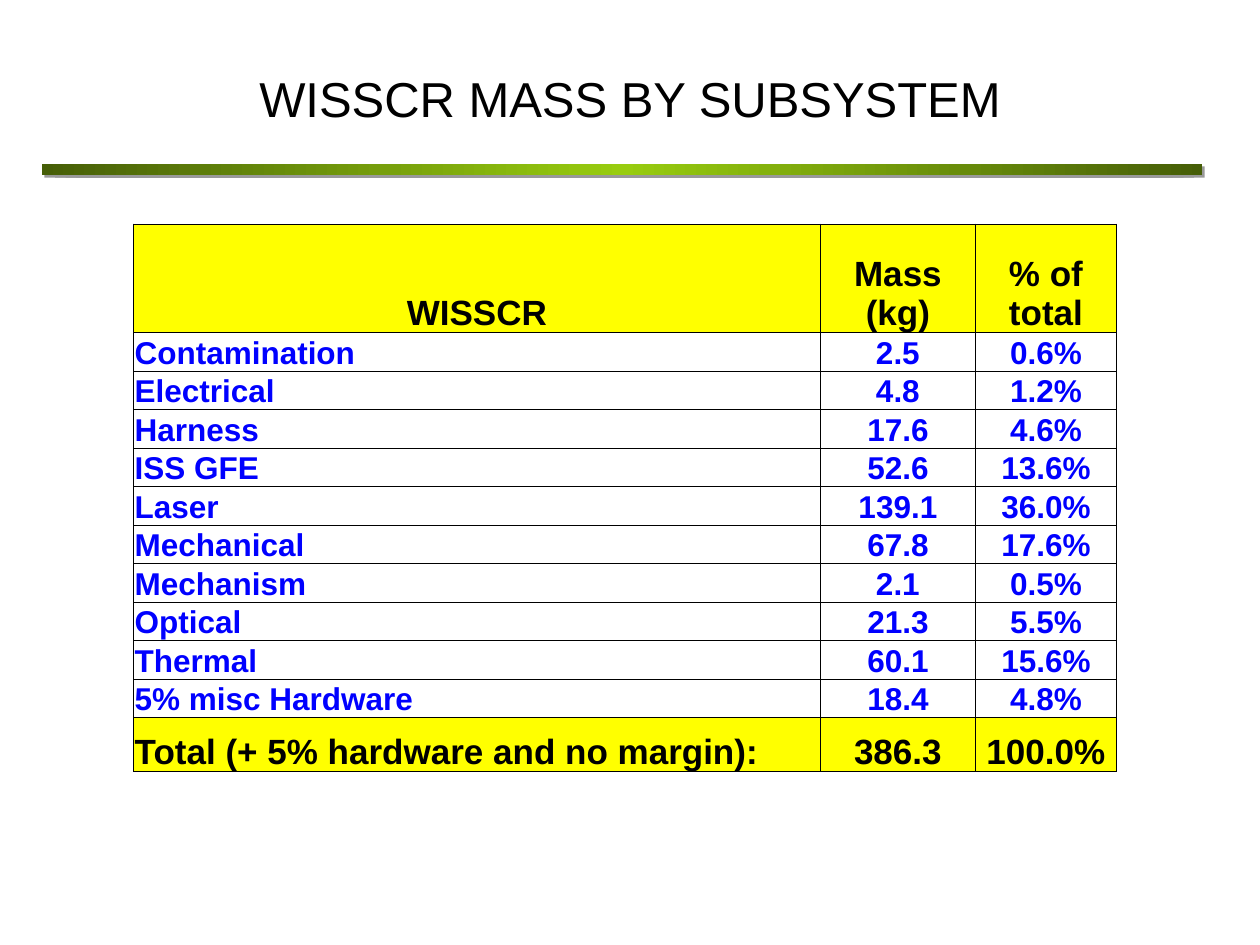
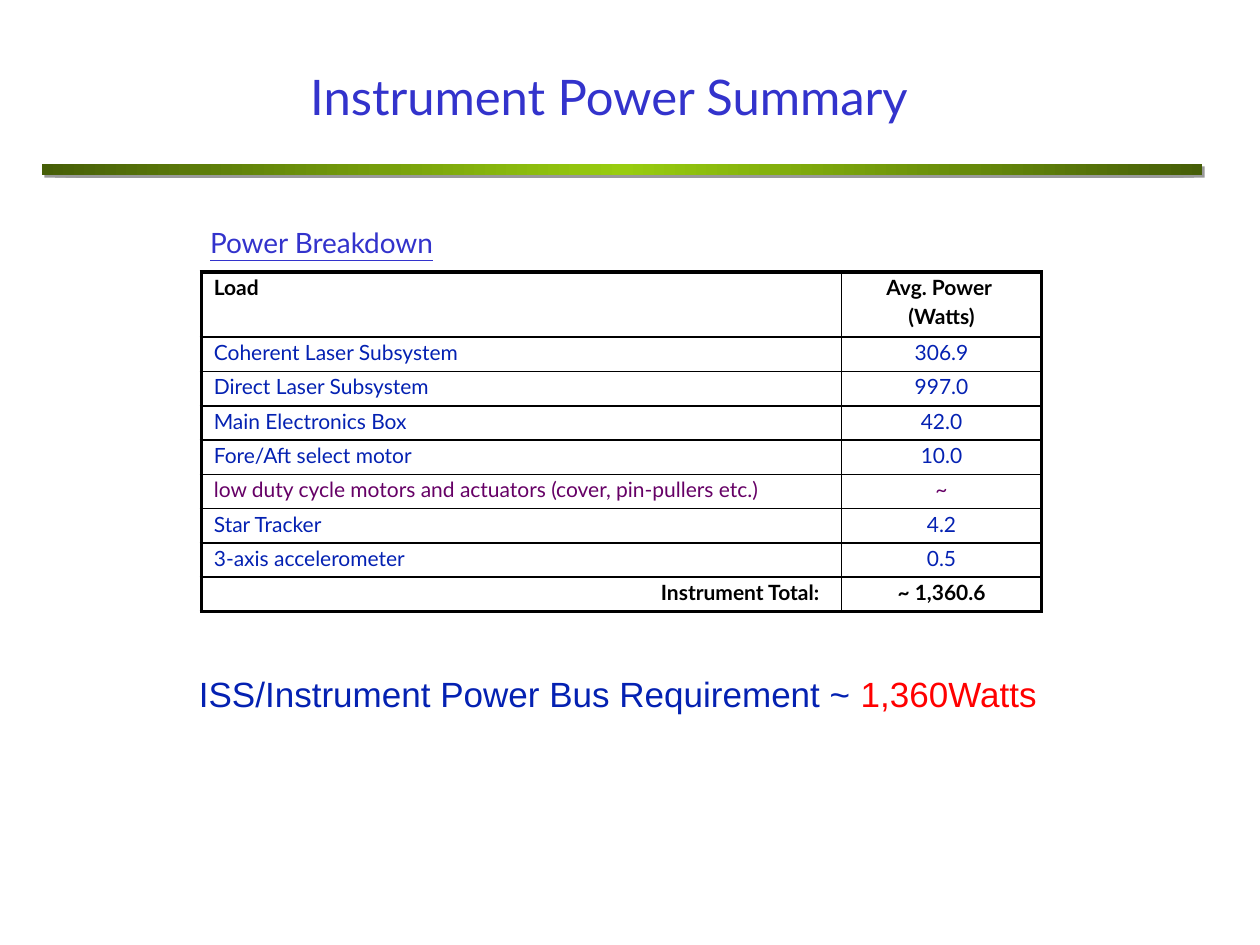
import pptx
import pptx.dml.color
import pptx.enum.shapes
import pptx.enum.text
import pptx.oxml
import pptx.oxml.ns
import pptx.util

Pt = pptx.util.Pt
RGBColor = pptx.dml.color.RGBColor
ALIGN = pptx.enum.text.PP_ALIGN
ANCHOR = pptx.enum.text.MSO_ANCHOR

BLACK = RGBColor(0x00, 0x00, 0x00)
YELLOW = RGBColor(0xFF, 0xFF, 0x00)
BLUE = RGBColor(0x00, 0x00, 0xFF)
NAVY = RGBColor(0x04, 0x21, 0xB2)
INDIGO = RGBColor(0x33, 0x33, 0xCC)
PURPLE = RGBColor(0x66, 0x00, 0x66)
RED = RGBColor(0xFF, 0x00, 0x00)
DARK_GREEN = RGBColor(0x46, 0x5E, 0x07)
LIME = RGBColor(0x98, 0xCC, 0x0F)
GREY = RGBColor(0x80, 0x80, 0x80)

TITLE_ONLY = 5
NS = pptx.oxml.ns.nsdecls("a")


def apply(target, values):
    for name, value in values.items():
        setattr(target, name, value)


def solid(colour):
    return f'<a:solidFill><a:srgbClr val="{colour}"/></a:solidFill>'


class Deck:
    def __init__(self):
        self.presentation = pptx.Presentation()
        apply(self.presentation, {"slide_width": Pt(720), "slide_height": Pt(540)})
        self.layout = self.presentation.slide_layouts[TITLE_ONLY]
        self.slide = None
        self.banded = False

    def new_slide(self, title, box, font, colour, anchor, spacing=None):
        self.slide = self.presentation.slides.add_slide(self.layout)
        if not self.banded:
            self.band()
        heading = self.slide.shapes.title
        apply(heading, dict(zip(("left", "top", "width", "height"), map(Pt, box))))
        apply(heading.text_frame, {
            "vertical_anchor": anchor,
            "word_wrap": True,
            "auto_size": pptx.enum.text.MSO_AUTO_SIZE.NONE,
        })
        self.set_lines(heading.text_frame, [[(title, colour)]],
                       {"name": font, "size": Pt(28)},
                       {"alignment": ALIGN.CENTER, "line_spacing": spacing})

    def band(self):
        band = self.slide.shapes.add_shape(
            pptx.enum.shapes.MSO_SHAPE.RECTANGLE, Pt(24), Pt(93.6), Pt(663), Pt(6.5))
        band.line.fill.background()
        properties = band.element.spPr
        stops = "".join(
            f'<a:gs pos="{position}"><a:srgbClr val="{colour}"/></a:gs>'
            for position, colour in ((0, DARK_GREEN), (50000, LIME), (100000, DARK_GREEN)))
        gradient = pptx.oxml.parse_xml(
            f'<a:gradFill {NS}><a:gsLst>{stops}</a:gsLst><a:lin ang="0"/></a:gradFill>')
        properties.find(pptx.oxml.ns.qn("a:ln")).addprevious(gradient)
        properties.append(pptx.oxml.parse_xml(
            f'<a:effectLst {NS}><a:outerShdw blurRad="0" dist="{Pt(2)}" dir="2700000">'
            f'<a:srgbClr val="{GREY}"><a:alpha val="80000"/></a:srgbClr>'
            '</a:outerShdw></a:effectLst>'))
        self.layout.shapes.element.append(band.element)
        self.banded = True

    def set_lines(self, frame, lines, font, layout):
        for index, runs in enumerate(lines):
            paragraph = frame.paragraphs[0] if index == 0 else frame.add_paragraph()
            apply(paragraph, layout)
            if index:
                paragraph.space_before = Pt(4.2)
            for text, colour in runs:
                run = paragraph.add_run()
                run.text = text
                apply(run.font, font)
                run.font.color.rgb = colour

    def text(self, box, runs, font):
        frame = self.slide.shapes.add_textbox(*map(Pt, box)).text_frame
        frame.word_wrap = True
        self.set_lines(frame, [runs], font, {})

    def table(self, corner, widths, heights):
        grid = self.slide.shapes.add_table(
            len(heights), len(widths), *map(Pt, corner),
            Pt(sum(widths)), Pt(sum(heights))).table
        apply(grid, {"first_row": False, "horz_banding": False})
        for column, width in zip(grid.columns, widths):
            column.width = Pt(width)
        for row, height in zip(grid.rows, heights):
            row.height = Pt(height)
        return grid

    def cell(self, cell, text, colour, font, layout, form, fill=None):
        apply(cell, form)
        self.set_lines(cell.text_frame, [[(line, colour)] for line in text.split("\n")],
                       font, layout)
        if fill is None:
            cell.fill.background()
        else:
            cell.fill.solid()
            cell.fill.fore_color.rgb = fill

    def borders(self, grid, inner, outer):
        last_row, last_column = len(grid.rows) - 1, len(grid.columns) - 1
        for r in range(last_row + 1):
            for c in range(last_column + 1):
                edges = {"L": c == 0, "R": c == last_column, "T": r == 0, "B": r == last_row}
                properties = grid.cell(r, c)._tc.get_or_add_tcPr()
                for index, (side, on_edge) in enumerate(edges.items()):
                    properties.insert(index, pptx.oxml.parse_xml(
                        f'<a:ln{side} {NS} w="{Pt(outer if on_edge else inner)}">'
                        f'{solid(BLACK)}</a:ln{side}>'))


def mass_slide(deck):
    deck.new_slide("WISSCR MASS BY SUBSYSTEM", (90, 26, 540, 60), "Arial", BLACK, ANCHOR.MIDDLE)
    masses = [
        ("WISSCR", "Mass (kg)", "% of total"),
        ("Contamination", "2.5", "0.6%"),
        ("Electrical", "4.8", "1.2%"),
        ("Harness", "17.6", "4.6%"),
        ("ISS GFE", "52.6", "13.6%"),
        ("Laser", "139.1", "36.0%"),
        ("Mechanical", "67.8", "17.6%"),
        ("Mechanism", "2.1", "0.5%"),
        ("Optical", "21.3", "5.5%"),
        ("Thermal", "60.1", "15.6%"),
        ("5% misc Hardware", "18.4", "4.8%"),
        ("Total (+ 5% hardware and no margin):", "386.3", "100.0%"),
    ]
    total = len(masses) - 1
    grid = deck.table((76.3, 128), (392.5, 88.6, 80.6), [62] + [22] * (total - 1) + [31])
    form = {"vertical_anchor": ANCHOR.BOTTOM, "margin_left": Pt(0.7), "margin_right": Pt(0.7),
            "margin_top": Pt(0.7), "margin_bottom": 0}
    for r, row in enumerate(masses):
        summary = r in (0, total)
        font = {"name": "Arial", "size": Pt(20 if summary else 18), "bold": True}
        for c, text in enumerate(row):
            align = ALIGN.LEFT if c == 0 and r else ALIGN.CENTER
            deck.cell(grid.cell(r, c), text, BLACK if summary else BLUE, font,
                      {"alignment": align}, form, YELLOW if summary else None)
    deck.borders(grid, 0.5, 0.5)


def power_slide(deck):
    deck.new_slide("Instrument Power Summary", (108, 39.6, 480, 33), "Lato", INDIGO,
                   ANCHOR.TOP, 0.85)
    deck.text((113, 125.3, 310, 27), [("Power Breakdown", INDIGO)],
              {"name": "Lato", "size": Pt(16), "underline": True})
    loads = [
        ("Load", "Avg. Power \n(Watts)", BLACK),
        ("Coherent Laser Subsystem", "306.9", NAVY),
        ("Direct Laser Subsystem", "997.0", NAVY),
        ("Main Electronics Box", "42.0", NAVY),
        ("Fore/Aft select motor", "10.0", NAVY),
        ("low duty cycle motors and actuators (cover, pin-pullers etc.)", "~", PURPLE),
        ("Star Tracker", "4.2", NAVY),
        ("3-axis accelerometer", "0.5", NAVY),
        ("Instrument Total:", "~ 1,360.6", BLACK),
    ]
    total = len(loads) - 1
    grid = deck.table((115, 155.5), (365.8, 114.5), [37.2] + [19.6] * total)
    for r, (load, power, colour) in enumerate(loads):
        font = {"name": "Lato", "size": Pt(12), "bold": r in (0, total)}
        load_align, indent = (ALIGN.RIGHT, 12.6) if r == total else (ALIGN.LEFT, 7.2)
        for c, (text, align, margin) in enumerate(
                ((load, load_align, indent), (power, ALIGN.CENTER, 7.2))):
            deck.cell(grid.cell(r, c), text, colour, font,
                      {"alignment": align, "line_spacing": 0.85},
                      {"margin_right": Pt(margin)})
    deck.borders(grid, 1, 2.25)
    deck.text((106.6, 381, 504, 31.5),
              [("ISS/Instrument Power Bus Requirement ~ ", NAVY), ("1,360Watts", RED)],
              {"name": "Arial", "size": Pt(20)})


def main():
    deck = Deck()
    mass_slide(deck)
    power_slide(deck)
    deck.presentation.save("out.pptx")


if __name__ == "__main__":
    main()
